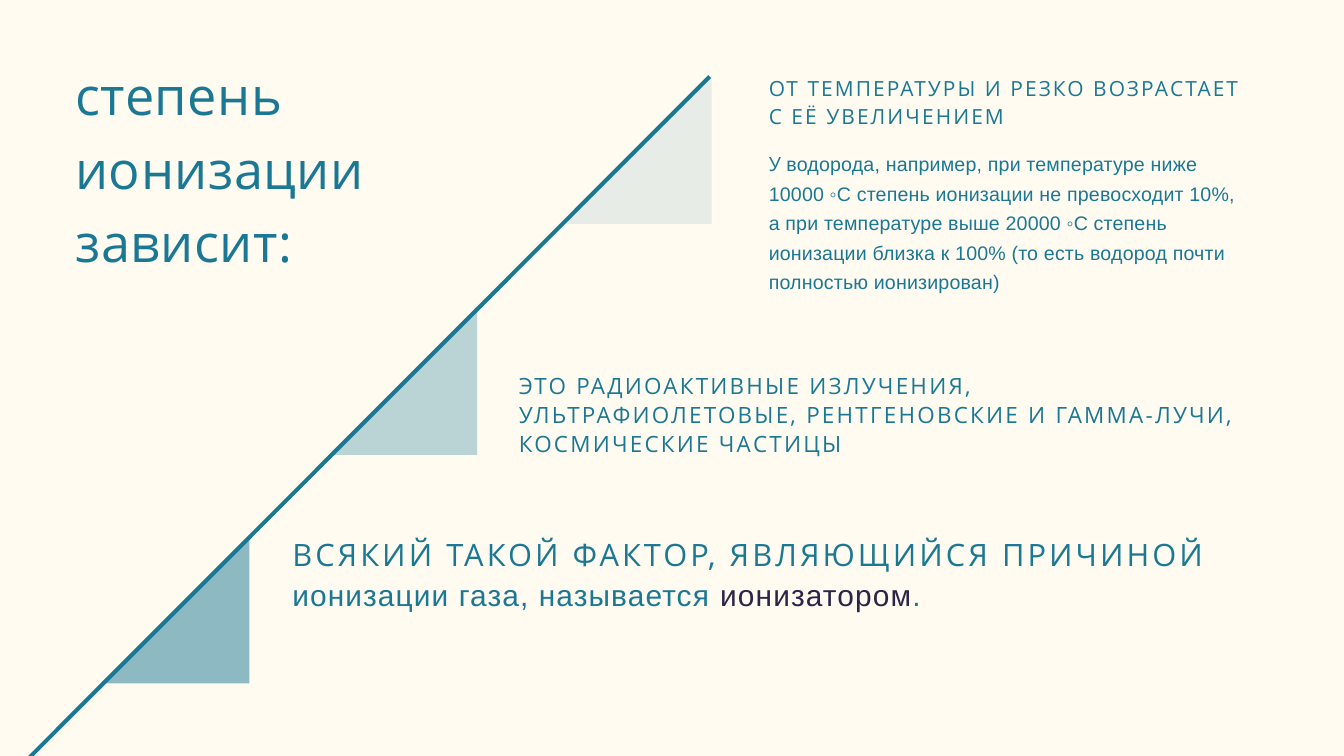
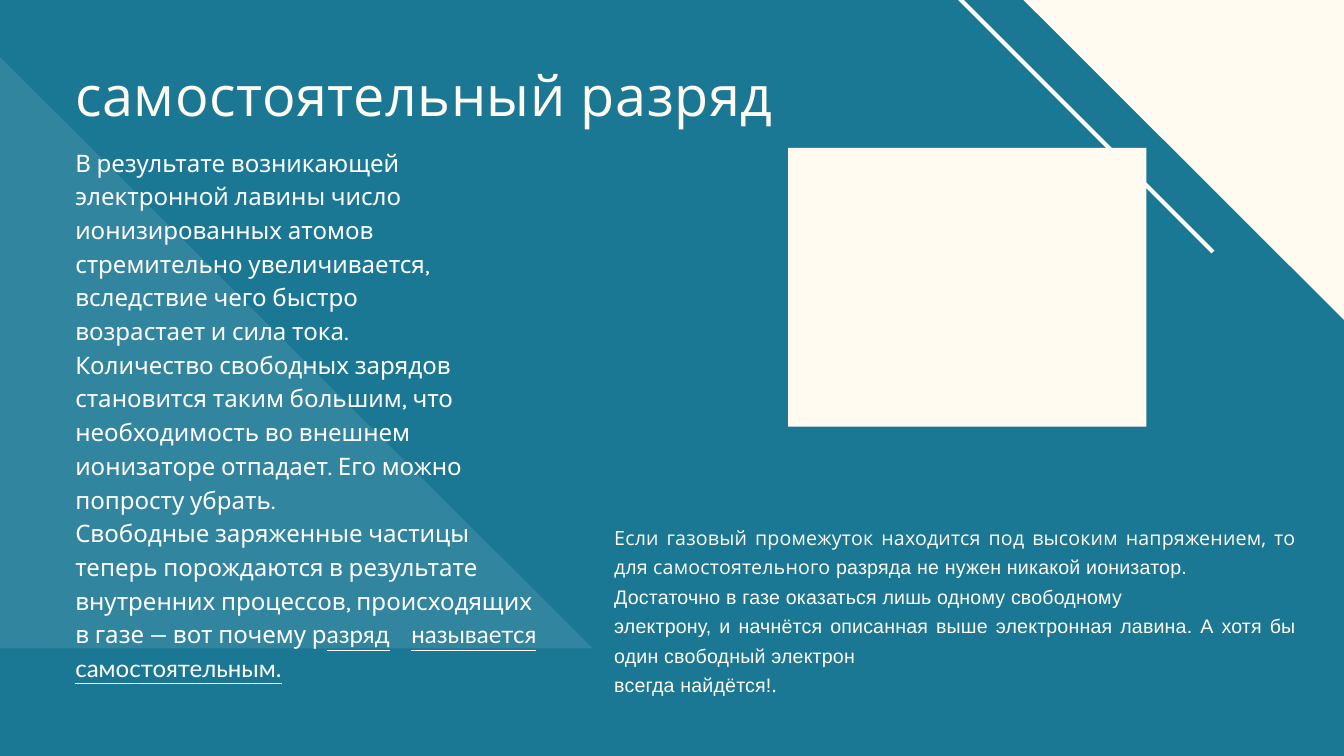
from pptx import Presentation
from pptx.dml.color import RGBColor
from pptx.enum.shapes import MSO_CONNECTOR, MSO_SHAPE
from pptx.enum.text import MSO_ANCHOR, MSO_AUTO_SIZE, PP_ALIGN
from pptx.oxml.ns import qn
from pptx.util import Inches, Pt
from lxml.etree import SubElement

theme = {
    "teal": RGBColor.from_string("1B7895"),
    "cream": RGBColor.from_string("FFFBF0"),
    "white": RGBColor.from_string("FFFFFF"),
    "plum": RGBColor.from_string("2D2549"),
    "rule": Pt(4.3),
    "title": ("Open Sans", 56, 0.6),
    "head": ("Open Sans", 59.7, 0.6),
    "lead": ("Open Sans", 33, 3.3),
    "term": ("Arial", 32, 1.2),
    "rays": ("Open Sans", 24, 2.4),
    "heat": ("Open Sans", 22.4, 2.2),
    "note": ("Open Sans", 21, 0.2),
    "plain": ("Arial", 21, 0.2),
    "body": ("Karla", 25.8, 0),
    "key": ("Lato", 25.8, 0),
}
teal, cream, white, plum = (theme[name] for name in ("teal", "cream", "white", "plum"))


def write(shape, box, gap, color, paras, align=PP_ALIGN.LEFT, tab=None):
    shape.left, shape.top, shape.width, shape.height = map(Inches, box)
    shape._element.getparent().append(shape._element)
    frame = shape.text_frame
    frame.margin_left = frame.margin_top = frame.margin_right = frame.margin_bottom = 0
    frame.word_wrap = True
    frame.auto_size = MSO_AUTO_SIZE.NONE
    frame.vertical_anchor = MSO_ANCHOR.TOP
    for at, parts in enumerate(paras):
        para = frame.add_paragraph() if at else frame.paragraphs[0]
        para.alignment = align
        para.line_spacing = Pt(gap)
        para.space_before = para.space_after = Pt(0)
        props = para._p.get_or_add_pPr()
        props.set("marL", "0")
        props.set("indent", "0")
        SubElement(props, qn("a:buNone"))
        if tab:
            stops = SubElement(props, qn("a:tabLst"))
            SubElement(stops, qn("a:tab"), pos=str(Inches(tab)), algn="l")
        for text, style, *tint in parts:
            run = para.add_run()
            run.text = text
            font, size, space = theme[style]
            run.font.name, run.font.size = font, Pt(size)
            run.font.bold = False
            run.font.underline = style == "key"
            run.font.color.rgb = tint[0] if tint else color
            run._r.get_or_add_rPr().set("spc", str(round(space * 100)))


deck = Presentation()
deck.slide_width, deck.slide_height = Inches(20), Inches(11.25)

side = 2.21
steps = [
    ([(x, y), (x, y + side), (x - side, y + side)], alpha)
    for x, y, alpha in ((3.71, 7.96, 50), (7.1, 4.56, 30), (10.59, 1.12, 10))
]
wedges = [
    ([(8.82, 9.65), (-0.22, 9.65), (-0.22, 0.63)], 10),
    ([(15.05, -0.18), (20.24, -0.18), (20.24, 5)], 100),
]
pages = []
for layout, back, ink, shades, line in (
    (4, cream, teal, steps, (-0.05, 11.76, 10.56, 1.14)),
    (3, teal, cream, wedges, (13.71, -0.59, 18.05, 3.75)),
):
    page = deck.slides.add_slide(deck.slide_layouts[layout])
    page.background.fill.solid()
    page.background.fill.fore_color.rgb = back
    for points, alpha in shades:
        first, *rest = [(Inches(x), Inches(y)) for x, y in points]
        pen = page.shapes.build_freeform(*first)
        pen.add_line_segments(rest)
        shade = pen.convert_to_shape()
        shade.shadow.inherit = False
        shade.line.fill.background()
        shade.fill.solid()
        shade.fill.fore_color.rgb = ink
        if alpha < 100:
            tone = shade._element.spPr.find(".//" + qn("a:srgbClr"))
            SubElement(tone, qn("a:alpha"), val=str(alpha * 1000))
    rule = page.shapes.add_connector(MSO_CONNECTOR.STRAIGHT, *map(Inches, line))
    rule.line.color.rgb = ink
    rule.line.width = theme["rule"]
    SubElement(rule._element.spPr, qn("a:effectLst"))
    pages.append(page)

gas, spark = pages
title, lead, rays, heat, note = list(gas.placeholders)
write(title, (1.12, 0.79, 5, 3.22), 78.4, teal, [[("степень ионизации зависит:", "title")]])
write(lead, (4.35, 7.93, 14.19, 1.77), 42.9, teal, [
    [("ВСЯКИЙ ТАКОЙ ФАКТОР, ЯВЛЯЮЩИЙСЯ ПРИЧИНОЙ", "lead")],
    [("ионизации газа, называется ", "term"), ("ионизатором", "term", plum), (".", "term")],
])
write(rays, (7.72, 5.5, 10.82, 1.27), 31.2, teal, [
    [("ЭТО РАДИОАКТИВНЫЕ ИЗЛУЧЕНИЯ, УЛЬТРАФИОЛЕТОВЫЕ, РЕНТГЕНОВСКИЕ И ГАММА-ЛУЧИ, "
      "КОСМИЧЕСКИЕ ЧАСТИЦЫ", "rays")],
])
write(heat, (11.44, 1.1, 7.09, 0.79), 29.1, teal, [
    [("ОТ ТЕМПЕРАТУРЫ И РЕЗКО ВОЗРАСТАЕТ С ЕЁ УВЕЛИЧЕНИЕМ", "heat")],
])
write(note, (11.44, 2.18, 7.09, 2.53), 31.5, teal, [
    [("У ", "note"),
     ("водорода, например, при температуре ниже 10000 ◦C степень ионизации "
      "не превосходит 10%,", "plain")],
    [("а при температуре выше 20000 ◦C степень ионизации близка к 100% "
      "(то есть водород почти полностью ионизирован)", "plain")],
])

frame = spark.shapes.add_shape(MSO_SHAPE.RECTANGLE, *map(Inches, (11.73, 2.2, 5.33, 4.15)))
frame.shadow.inherit = False
frame.fill.solid()
frame.fill.fore_color.rgb = cream
frame.line.fill.background()

title, body, note = list(spark.placeholders)
write(note, (9.14, 7.73, 10.15, 3.03), 31.6, cream, [
    [("Если газовый промежуток находится под высоким напряжением, то для самостоятельного ", "note"),
     ("разряда не нужен никакой ионизатор.", "plain")],
    [("Достаточно в газе оказаться лишь одному свободному", "plain")],
    [("электрону, и начнётся описанная выше электронная лавина. "
      "А хотя бы один свободный электрон", "plain")],
    [("всегда найдётся!", "plain"), (".", "note")],
], PP_ALIGN.JUSTIFY)
write(title, (1.12, 0.9, 10.6, 0.99), 71.6, cream, [[("самостоятельный разряд", "head")]])
write(body, (1.12, 2.13, 7, 8.48), 36.1, white, [
    [("В результате возникающей электронной лавины число ионизированных атомов "
      "стремительно увеличивается, вследствие чего быстро", "body")],
    [("возрастает и сила тока.", "body")],
    [("Количество свободных зарядов становится таким большим, "
      "что необходимость во внешнем", "body")],
    [("ионизаторе отпадает. Его можно попросту убрать.", "body")],
    [("Свободные заряженные частицы теперь порождаются в результате внутренних процессов, "
      "происходящих в газе — вот почему р", "body"),
     ("азряд\tназывается самостоятельным.", "key")],
], tab=5.14)

deck.save("out.pptx")
